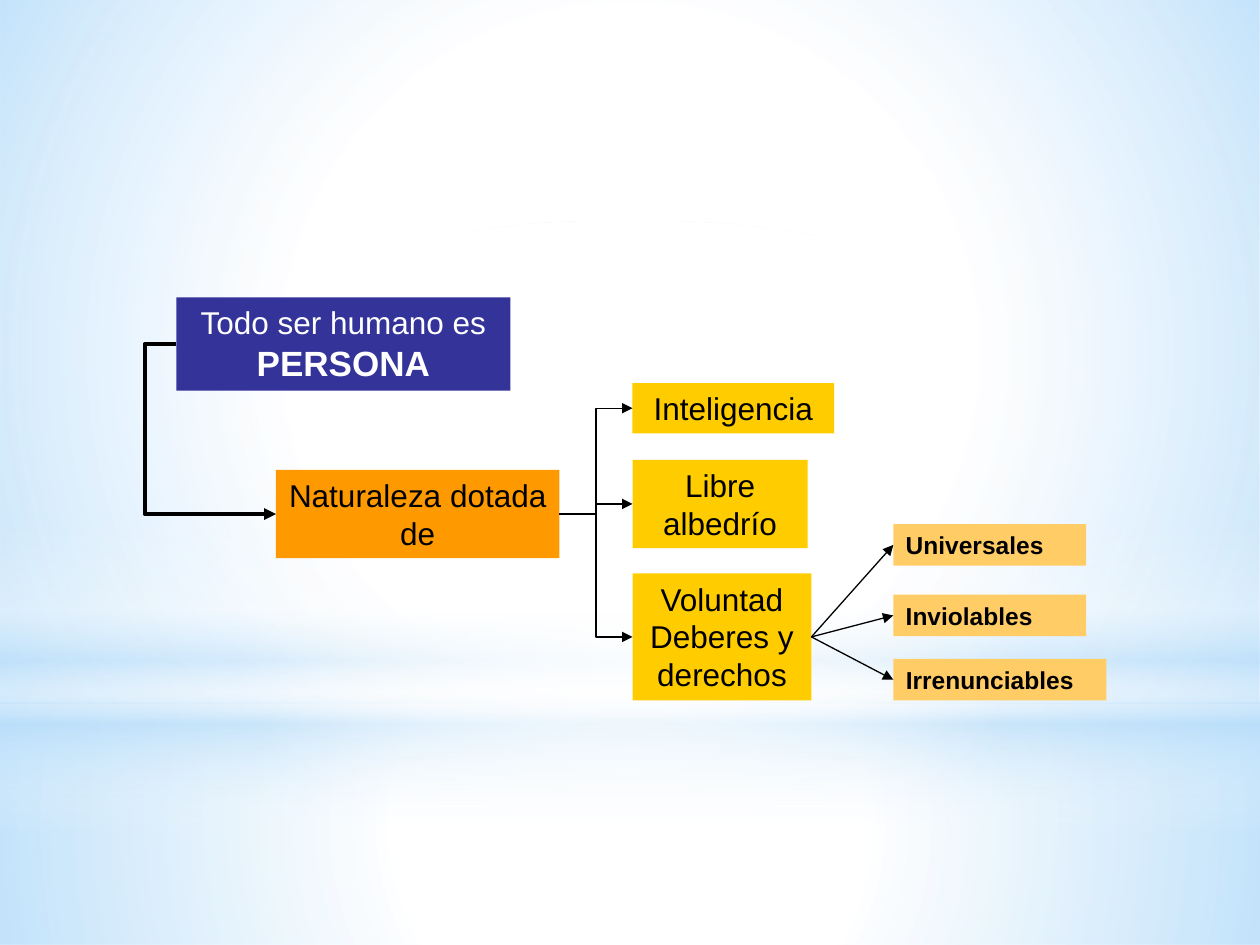
from lxml.etree import SubElement
from pptx import Presentation
from pptx.dml.color import RGBColor
from pptx.enum.shapes import MSO_CONNECTOR, MSO_SHAPE
from pptx.enum.text import MSO_AUTO_SIZE, PP_ALIGN
from pptx.oxml.ns import qn
from pptx.util import Inches, Pt

COLORS = {
    "white": "FFFFFF",
    "black": "000000",
    "sky": "B4DCFA",
    "indigo": "333399",
    "orange": "FF9900",
    "yellow": "FFCC00",
    "peach": "FFCC66",
}
LEFT, RIGHT = 1, 3


def rgb(name):
    return RGBColor.from_string(COLORS[name])


def add_glow(slide, kind, box, stops, angle=None):
    sp = slide.shapes.add_shape(kind, *map(Inches, box))
    sp.shadow.inherit = False
    sp.fill.background()
    sp.line.fill.background()
    spPr = sp._element.spPr
    grad = SubElement(spPr, qn("a:gradFill"), rotWithShape="1")
    spPr.replace(spPr.find(qn("a:noFill")), grad)
    gs_list = SubElement(grad, qn("a:gsLst"))
    for pos, color, alpha in stops:
        gs = SubElement(gs_list, qn("a:gs"), pos=str(pos * 1000))
        clr = SubElement(gs, qn("a:srgbClr"), val=COLORS[color])
        SubElement(clr, qn("a:alpha"), val=str(alpha * 1000))
    if angle is None:
        path = SubElement(grad, qn("a:path"))
        path.set("path", "circle")
        SubElement(path, qn("a:fillToRect"), l="50000", t="50000", r="50000", b="50000")
    else:
        SubElement(grad, qn("a:lin"), ang=str(angle * 60000), scaled="0")


def add_background(slide):
    rect, oval = MSO_SHAPE.RECTANGLE, MSO_SHAPE.OVAL
    add_glow(slide, rect, (0, 5.58, 10, 1.92),
             [(0, "white", 91), (37, "white", 76), (100, "sky", 79)])
    add_glow(slide, rect, (0, 0, 10, 5.58),
             [(0, "white", 89), (48, "white", 62), (100, "sky", 79)])
    add_glow(slide, rect, (0, 4.12, 10, 2.5),
             [(0, "white", 0), (29, "white", 30), (45, "sky", 40),
              (55, "white", 26), (65, "sky", 60), (100, "white", 0)], angle=90)
    add_glow(slide, oval, (0, 1.75, 10, 5.58), [(0, "white", 100), (56, "white", 0)])


def add_box(slide, box, fill, text, size=18, color="black", bold=False,
            align=PP_ALIGN.CENTER):
    sp = slide.shapes.add_textbox(*map(Inches, box))
    sp.fill.solid()
    sp.fill.fore_color.rgb = rgb(fill)
    tf = sp.text_frame
    tf.word_wrap = True
    tf.auto_size = MSO_AUTO_SIZE.SHAPE_TO_FIT_TEXT
    tf.text = text
    for p in tf.paragraphs:
        p.alignment = align
        for r in p.runs:
            format_run(r, size, color, bold)
    return sp


def format_run(r, size, color, bold):
    r.font.name = "Arial"
    r.font.size = Pt(size)
    r.font.bold = bold
    r.font.color.rgb = rgb(color)


def add_arrow(slide, kind, start, end, start_site=RIGHT, width=0.75, bend=None):
    cxn = slide.shapes.add_connector(kind, 0, 0, 0, 0)
    cxn.begin_connect(start, start_site)
    cxn.end_connect(end, LEFT)
    cxn.line.color.rgb = rgb("black")
    cxn.line.width = Pt(width)
    spPr = cxn._element.spPr
    SubElement(spPr.find(qn("a:ln")), qn("a:tailEnd"), type="triangle")
    SubElement(spPr, qn("a:effectLst"))
    if bend is not None:
        guides = spPr.find(qn("a:prstGeom")).find(qn("a:avLst"))
        SubElement(guides, qn("a:gd"), name="adj1", fmla=f"val {round(bend * 100000)}")


def main():
    prs = Presentation()
    prs.slide_width, prs.slide_height = Inches(10), Inches(7.5)
    slide = prs.slides.add_slide(prs.slide_layouts[6])
    add_background(slide)

    person = add_box(slide, (1.4, 2.36, 2.65, 0.74), "indigo",
                     "Todo ser humano es ", color="white")
    r = person.text_frame.paragraphs[0].add_run()
    r.text = "PERSONA"
    format_run(r, 20, "white", True)
    nature = add_box(slide, (2.19, 3.73, 2.25, 0.7), "orange", "Naturaleza dotada de")
    add_arrow(slide, MSO_CONNECTOR.ELBOW, person, nature, LEFT, 2.25, -0.32)

    gifts = [
        add_box(slide, (5.02, top, width, height), "yellow", text)
        for top, width, height, text in [
            (3.04, 1.6, 0.4, "Inteligencia"),
            (3.65, 1.39, 0.7, "Libre albedrío"),
            (4.55, 1.42, 1.01, "Voluntad\nDeberes y derechos"),
        ]
    ]
    for gift in gifts:
        add_arrow(slide, MSO_CONNECTOR.ELBOW, nature, gift)

    for top, width, text in [
        (4.16, 1.53, "Universales"),
        (4.72, 1.53, "Inviolables"),
        (5.23, 1.69, "Irrenunciables"),
    ]:
        trait = add_box(slide, (7.09, top, width, 0.33), "peach", text, size=14,
                        bold=True, align=PP_ALIGN.LEFT)
        add_arrow(slide, MSO_CONNECTOR.STRAIGHT, gifts[-1], trait)

    prs.save("out.pptx")


if __name__ == "__main__":
    main()
